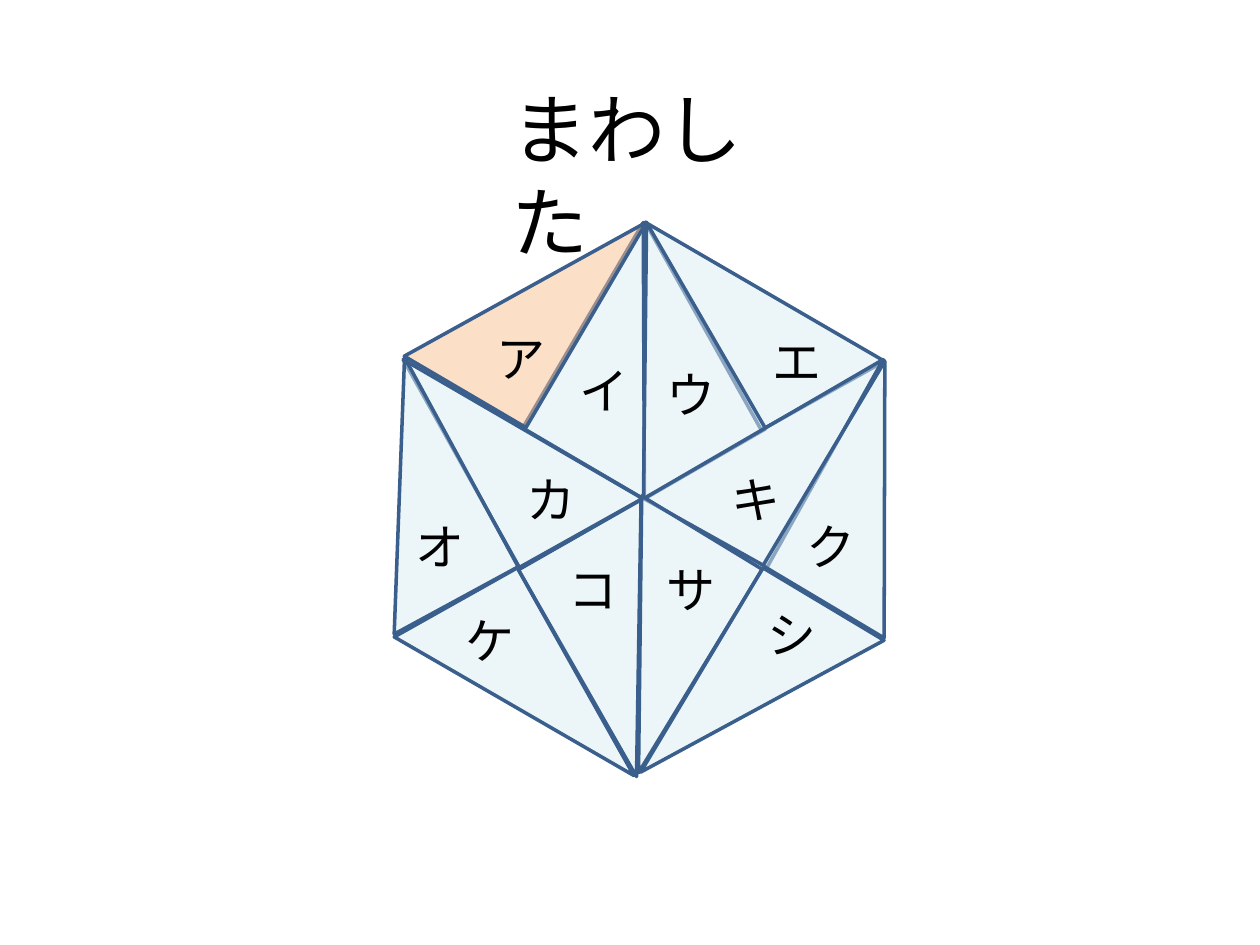
from dataclasses import dataclass

from lxml import etree
from pptx import Presentation
from pptx.dml.color import RGBColor
from pptx.enum.shapes import MSO_SHAPE
from pptx.enum.text import MSO_AUTO_SIZE
from pptx.oxml.ns import qn
from pptx.util import Inches, Pt

RIGHT_TRIANGLE = MSO_SHAPE.RIGHT_TRIANGLE
FIT_SHAPE = MSO_AUTO_SIZE.SHAPE_TO_FIT_TEXT


@dataclass(frozen=True)
class Theme:
    font: str = "Calibri"
    title_size: int = 44
    label_size: int = 28
    text: RGBColor = RGBColor(0x00, 0x00, 0x00)
    tile: RGBColor = RGBColor(0xDB, 0xEE, 0xF4)
    highlight: RGBColor = RGBColor(0xFA, 0xC0, 0x90)
    outline: RGBColor = RGBColor(0x3A, 0x5F, 0x8C)
    outline_width: float = 2
    opacity: int = 50


THEME = Theme()
TILE_WIDTH, TILE_HEIGHT = 1.12, 1.89
LABEL_HEIGHT = 0.57

# Tiles from back to front: left, top (inside the hexagon's box), rotation, mirrored
TILES = [
    (1.55, 0.92, 30.4, False),
    (0.59, 1.46, 330.8, False),
    (2.51, 0.37, 330.8, False),
    (1.56, 0.92, 330, True),
    (2.5, 1.46, 29.2, True),
    (3.46, 2.02, 30.8, False),
    (1.52, 3.09, 211.3, False),
    (-0.39, 1.99, 331.5, True),
    (0.52, 3.66, 150.7, False),
    (1.51, 3.12, 150.3, True),
    (2.49, 3.66, 210.9, True),
]
HIGHLIGHT_TILE = (0.61, 0.35, 30.4, True)

# Labels: letter, left, top (inside the hexagon's box), width
HIGHLIGHT_LABEL = ("ア", 0.84, 1.56, 0.55)
LABELS = [
    ("イ", 1.5, 1.81, 0.53),
    ("ウ", 2.19, 1.84, 0.57),
    ("オ", 0.2, 3.05, 0.57),
    ("エ", 3.03, 1.58, 0.55),
    ("カ", 1.08, 2.68, 0.53),
    ("ク", 3.3, 3.05, 0.52),
    ("キ", 2.71, 2.68, 0.58),
    ("コ", 1.41, 3.39, 0.52),
    ("ケ", 0.6, 3.8, 0.57),
    ("シ", 2.99, 3.75, 0.55),
    ("サ", 2.19, 3.39, 0.59),
]


def add_text(shapes, words, left, top, width, height, size):
    box = shapes.add_textbox(Inches(left), Inches(top), Inches(width), Inches(height))
    frame = box.text_frame
    frame.word_wrap = True
    frame.auto_size = FIT_SHAPE
    line = frame.paragraphs[0]
    line.text = words
    line.font.name = THEME.font
    line.font.size = Pt(size)
    line.font.color.rgb = THEME.text


def add_tile(shapes, left, top, rotation, mirrored, color):
    tile = shapes.add_shape(RIGHT_TRIANGLE, Inches(left), Inches(top),
                            Inches(TILE_WIDTH), Inches(TILE_HEIGHT))
    tile.rotation = rotation
    tile.shadow.inherit = False
    tile.fill.solid()
    tile.fill.fore_color.rgb = color
    tile.line.color.rgb = THEME.outline
    tile.line.width = Pt(THEME.outline_width)

    # Transparency and mirroring
    properties = tile.element.spPr
    fill_color = properties.find(qn("a:solidFill")).find(qn("a:srgbClr"))
    etree.SubElement(fill_color, qn("a:alpha"), val=str(THEME.opacity * 1000))
    if mirrored:
        properties.find(qn("a:xfrm")).set("flipH", "1")


def add_hexagon(slide, left, top):
    def place_tile(shapes, tile, color):
        x, y, rotation, mirrored = tile
        add_tile(shapes, left + x, top + y, rotation, mirrored, color)

    def place_label(shapes, label):
        letter, x, y, width = label
        add_text(shapes, letter, left + x, top + y, width, LABEL_HEIGHT, THEME.label_size)

    for tile in TILES:
        place_tile(slide.shapes, tile, THEME.tile)

    # Highlighted tile, grouped with its letter
    highlight = slide.shapes.add_group_shape()
    place_tile(highlight.shapes, HIGHLIGHT_TILE, THEME.highlight)
    place_label(highlight.shapes, HIGHLIGHT_LABEL)

    for label in LABELS:
        place_label(slide.shapes, label)


def add_title(slide, left, top, width, height):
    add_text(slide.shapes, "まわした", left, top, width, height, THEME.title_size)


def main():
    deck = Presentation()
    deck.slide_width, deck.slide_height = Inches(10), Inches(7.5)
    slide = deck.slides.add_slide(deck.slide_layouts[6])
    add_hexagon(slide, 3, 1)
    add_title(slide, 3.96, 0.6, 2.41, 0.84)
    deck.save("out.pptx")


if __name__ == "__main__":
    main()
